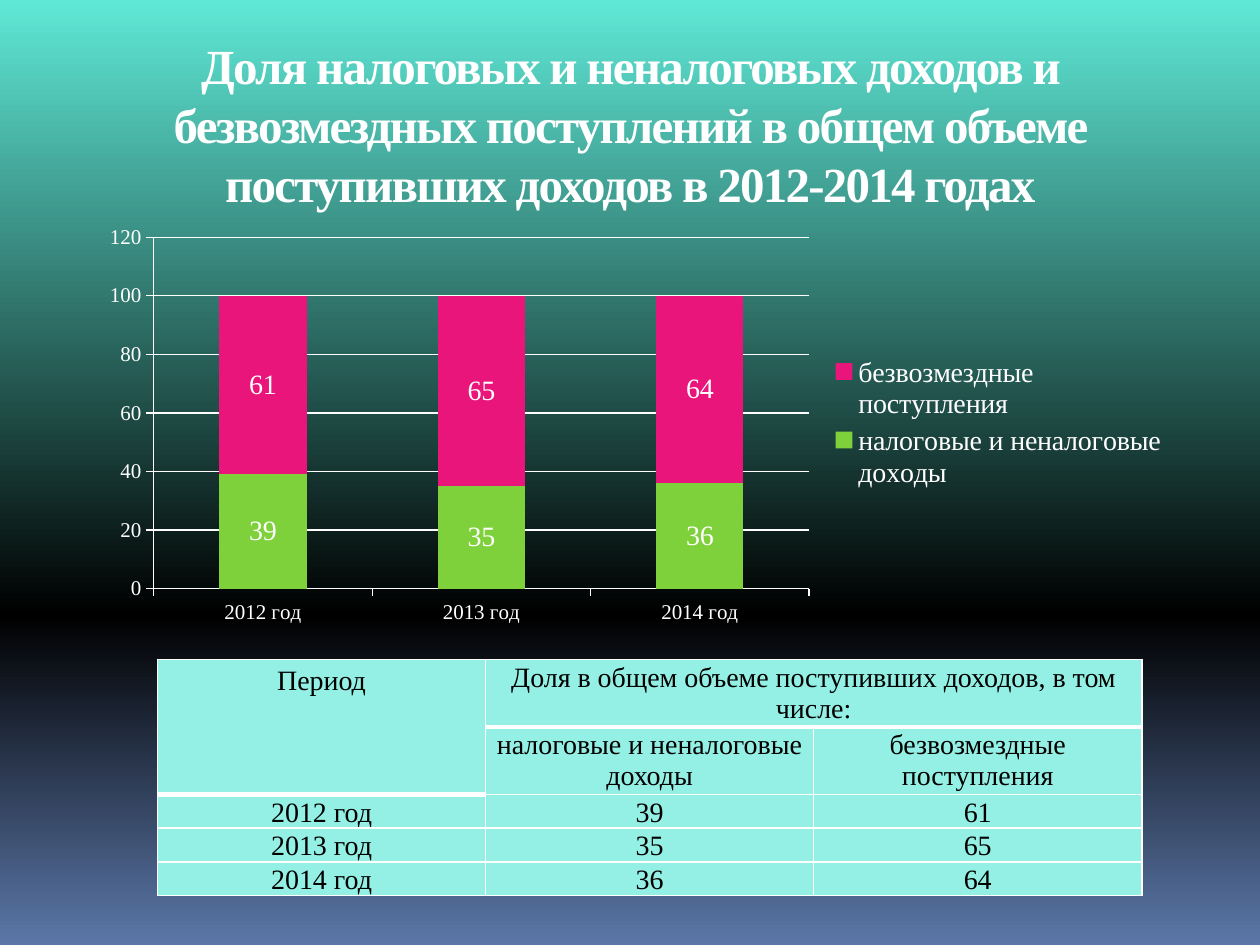
"""Build a slide on income shares with a stacked chart and a table."""
from copy import deepcopy

from lxml.etree import SubElement
from pptx import Presentation
from pptx.chart.data import CategoryChartData as Data
from pptx.dml.color import RGBColor
from pptx.enum.chart import XL_CHART_TYPE as Kind, XL_LEGEND_POSITION as Side, XL_TICK_MARK as Tick
from pptx.enum.text import MSO_ANCHOR as Anchor, PP_ALIGN as Align
from pptx.oxml import parse_xml
from pptx.oxml.ns import nsdecls, qn
from pptx.util import Pt

FACE = "Times New Roman"
WHITE = "FFFFFF"


def rgb(code):
    return RGBColor.from_string(code)


def style(font, size, code):
    font.name = FACE
    font.size = Pt(size)
    font.color.rgb = rgb(code)


deck = Presentation()
deck.slide_width, deck.slide_height = Pt(720), Pt(540)
slide = deck.slides.add_slide(deck.slide_layouts[6])

fill = slide.background.fill
fill.gradient()
fill.gradient_angle = 270
stops = slide.element.find(".//" + qn("a:gsLst"))
stops.append(deepcopy(stops[-1]))
shades = [(0, "5FE8D6"), (0.65, "000000"), (1, "5B77A8")]
for stop, (place, code) in zip(fill.gradient_stops, shades):
    stop.position = place
    stop.color.rgb = rgb(code)

title = slide.shapes.add_textbox(Pt(36), Pt(16.6), Pt(648), Pt(106.6))
frame = title.text_frame
frame.word_wrap = True
para = frame.paragraphs[0]
run = para.add_run()
run.text = ("Доля налоговых и неналоговых доходов и безвозмездных поступлений "
            "в общем объеме поступивших доходов в 2012-2014 годах")
para.alignment = Align.CENTER
para.line_spacing = Pt(33.7)
style(para.font, 28, WHITE)
para.font.bold = True
run.font.bold = True
run.font._element.set("spc", "-100")

years = ["2012 год", "2013 год", "2014 год"]
parts = [
    ("налоговые и неналоговые доходы", [39, 35, 36], "7FD13B"),
    ("безвозмездные поступления", [61, 65, 64], "EA157A"),
]
data = Data()
data.categories = years
for name, vals, code in parts:
    data.add_series(name, vals)
chart = slide.shapes.add_chart(
    Kind.COLUMN_STACKED, Pt(50.4), Pt(123.8), Pt(624.2), Pt(236.2), data).chart
chart.has_title = False
style(chart.font, 10, WHITE)
chart.has_legend = True
chart.legend.position = Side.RIGHT
chart.legend.include_in_layout = False
style(chart.legend.font, 16, WHITE)

plot = chart.plots[0]
plot.gap_width, plot.overlap = 150, 100
plot.vary_by_categories = False
for series, (name, vals, code) in zip(plot.series, parts):
    series.format.fill.solid()
    series.format.fill.fore_color.rgb = rgb(code)
    labels = series.data_labels
    labels.show_value = True
    style(labels.font, 16, WHITE)

scale = chart.value_axis
scale.minimum_scale, scale.maximum_scale, scale.major_unit = 0, 120, 20
scale.has_major_gridlines = True
for axis in (chart.category_axis, scale):
    axis.major_tick_mark = Tick.OUTSIDE
    style(axis.tick_labels.font, 12, WHITE)
for item in (chart.category_axis, scale, scale.major_gridlines):
    item.format.line.color.rgb = rgb(WHITE)
    item.format.line.width = Pt(0.75)

area = chart._chartSpace.find(".//" + qn("c:plotArea"))
for old in area.findall(qn("c:layout")):
    area.remove(old)
layout = parse_xml(f"<c:layout {nsdecls('c')}><c:manualLayout/></c:layout>")
area.insert(0, layout)
rules = [("layoutTarget", "inner"), ("xMode", "edge"), ("yMode", "edge"),
         ("x", "0.06"), ("y", "0.05"), ("w", "0.6"), ("h", "0.85")]
for tag, value in rules:
    SubElement(layout[0], qn("c:" + tag)).set("val", value)

rows = [
    ["Период", "Доля в общем объеме поступивших доходов, в том числе:", ""],
    ["", *[name for name, vals, code in parts]],
    *zip(years, *[map(str, vals) for name, vals, code in parts]),
]
grid = slide.shapes.add_table(5, 3, Pt(90), Pt(376.8), Pt(562.5), Pt(135)).table
for col in grid.columns:
    col.width = Pt(187.5)
for row, high in zip(grid.rows, [38.6, 38.6, 19.3, 19.3, 19.3]):
    row.height = Pt(high)
grid.cell(0, 0).merge(grid.cell(1, 0))
grid.cell(0, 1).merge(grid.cell(0, 2))

for i, texts in enumerate(rows):
    for j, text in enumerate(texts):
        cell = grid.cell(i, j)
        if text != "Период":
            cell.margin_left = cell.margin_right = 0
            cell.margin_top = cell.margin_bottom = 0
            cell.vertical_anchor = Anchor.MIDDLE if i < 2 else Anchor.BOTTOM
        para = cell.text_frame.paragraphs[0]
        if text:
            para.text = text
        para.alignment = Align.CENTER
        style(para.font, 16, "000000")
        para.font.bold = False
        head = i == 0 or (i, j) == (1, 0)
        props = cell._tc.get_or_add_tcPr()
        for edge in "LRTB":
            thick = 3 if head and edge == "B" else 1
            line = SubElement(props, qn("a:ln" + edge), w=str(Pt(thick)))
            paint = SubElement(line, qn("a:solidFill"))
            SubElement(paint, qn("a:srgbClr"), val=WHITE)
        cell.fill.solid()
        cell.fill.fore_color.rgb = rgb("94F0E4")

deck.save("out.pptx")
